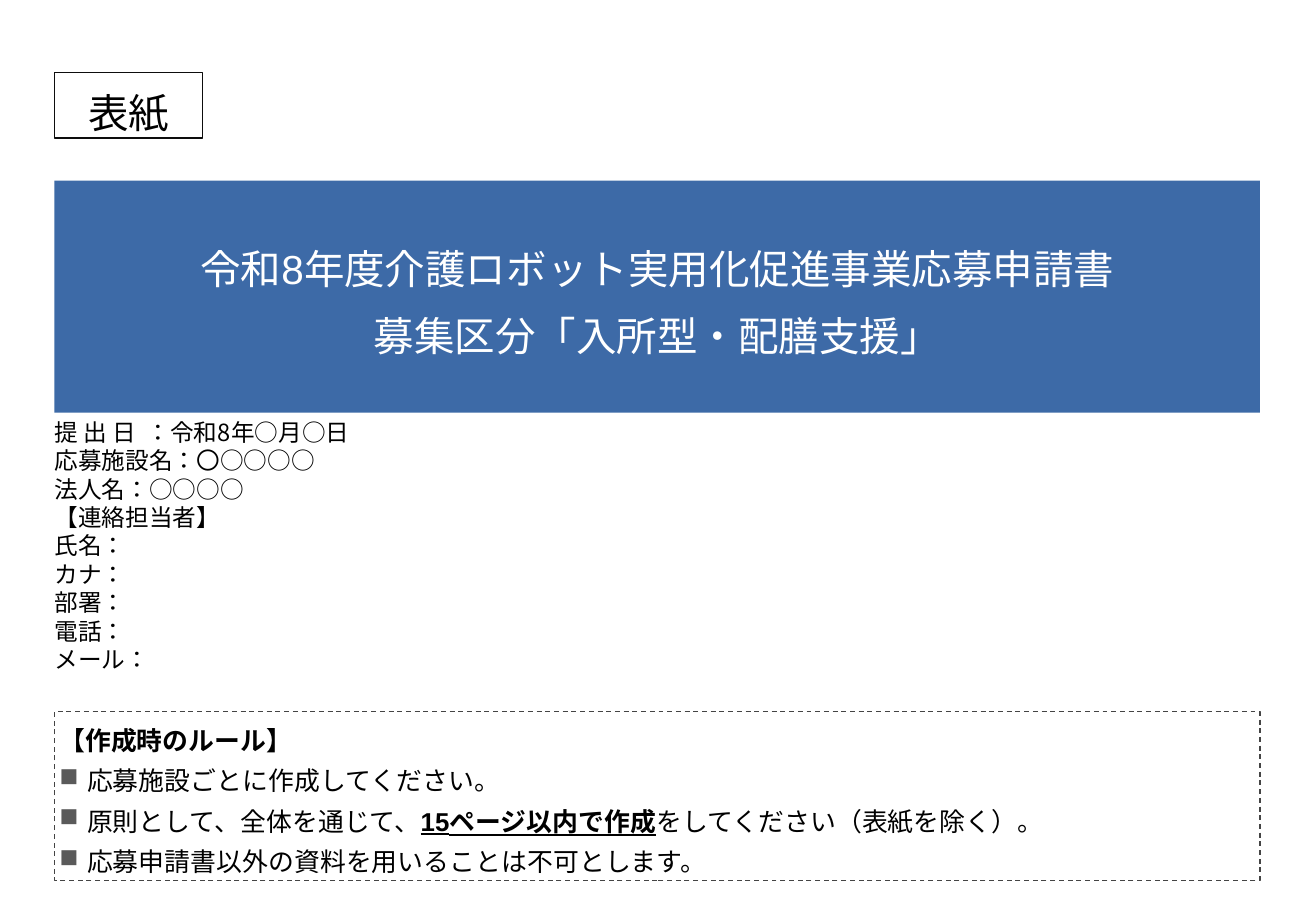
from lxml.etree import SubElement
from pptx import Presentation
from pptx.dml.color import RGBColor
from pptx.enum.dml import MSO_LINE
from pptx.enum.lang import MSO_LANGUAGE_ID
from pptx.enum.shapes import MSO_SHAPE
from pptx.enum.text import MSO_ANCHOR, PP_ALIGN
from pptx.oxml.ns import qn
from pptx.util import Cm, Pt

COLORS = {"banner": "3D6AA7", "white": "FFFFFF", "black": "000000",
          "tag_line": "0D0D0D", "rule_line": "444444", "bullet": "5A5A5A"}
CJK_FONT = "Noto Sans CJK JP"
LEFT, WIDTH = 1.14, 25.2

CONTACT_LINES = [
    "提 出 日  ：令和8年○月○日", "応募施設名：〇○○○○", "法人名：○○○○", "【連絡担当者】",
    "氏名：", "カナ：", "部署：", "電話：", "メール：",
]
RULES_HEADING = "【作成時のルール】"
# Each rule is a list of (text, emphasised) pieces.
RULES = [
    [("応募施設ごとに作成してください。", False)],
    [("原則として、全体を通じて、", False), ("15ページ以内で作成", True),
     ("をしてください（表紙を除く）。", False)],
    [("応募申請書以外の資料を用いることは不可とします。", False)],
]


def color(name):
    return RGBColor.from_string(COLORS[name])


def style(p, size, name="Arial", ink="black"):
    """Set the paragraph's Latin and Japanese fonts, size and colour."""
    font = p.font
    font.name, font.size = name, Pt(size)
    font.color.rgb = color(ink)
    font.language_id = MSO_LANGUAGE_ID.JAPANESE
    def_rpr = p._p.get_or_add_pPr().find(qn("a:defRPr"))
    SubElement(def_rpr, qn("a:ea")).set("typeface", CJK_FONT)


def set_indent(p, indent):
    p_pr = p._p.get_or_add_pPr()
    p_pr.set("marL", str(Cm(indent)))
    p_pr.set("indent", str(-Cm(indent)))
    return p_pr


def add_bullet(p):
    p_pr = set_indent(p, 0.58)
    bullet_color = SubElement(p_pr, qn("a:buClr"))
    SubElement(bullet_color, qn("a:srgbClr")).set("val", COLORS["bullet"])
    SubElement(p_pr, qn("a:buChar")).set("char", "■")


def set_margins(tf, x, top, bottom):
    tf.margin_left = tf.margin_right = Cm(x)
    tf.margin_top, tf.margin_bottom = Cm(top), Cm(bottom)


def paragraphs(tf, count):
    """Return count paragraphs, the first being the frame's own."""
    return [tf.paragraphs[0]] + [tf.add_paragraph() for _ in range(count - 1)]


def add_box(slide, box, fill=None, line=None):
    sp = slide.shapes.add_shape(MSO_SHAPE.RECTANGLE, *map(Cm, box))
    sp.shadow.inherit = False
    if fill:
        sp.fill.solid()
        sp.fill.fore_color.rgb = color(fill)
    else:
        sp.fill.background()
    if line:
        sp.line.color.rgb = color(line)
        sp.line.width = Pt(0.75)
    else:
        sp.line.fill.background()
    return sp


def add_titles(tf, lines, ink):
    for i, (p, text) in enumerate(zip(paragraphs(tf, len(lines)), lines)):
        p.text = text
        p.alignment = PP_ALIGN.CENTER
        p.line_spacing = 1.2
        if i:
            p.space_before = Pt(5)
        style(p, 24, ink=ink)


def add_cover_tag(slide, box):
    tf = add_box(slide, box, line="tag_line").text_frame
    tf.vertical_anchor = MSO_ANCHOR.TOP
    add_titles(tf, ["表紙"], "black")


def add_banner(slide, box):
    tf = add_box(slide, box, fill="banner").text_frame
    tf.word_wrap = False
    tf.vertical_anchor = MSO_ANCHOR.MIDDLE
    set_margins(tf, 0.05, 0.05, 0.05)
    add_titles(tf, ["令和8年度介護ロボット実用化促進事業応募申請書",
                    "募集区分「入所型・配膳支援」"], "white")


def add_contact(slide, box):
    tf = slide.shapes.add_textbox(*map(Cm, box)).text_frame
    tf.word_wrap = True
    set_margins(tf, 0, 0.1, 0.13)
    for p, text in zip(paragraphs(tf, len(CONTACT_LINES)), CONTACT_LINES):
        p.text = text
        set_indent(p, 0.74)
        style(p, 14, CJK_FONT)


def add_rules(slide, box):
    sp = add_box(slide, box, line="rule_line")
    sp.line.dash_style = MSO_LINE.DASH
    tf = sp.text_frame
    tf.word_wrap = True
    tf.vertical_anchor = MSO_ANCHOR.MIDDLE
    set_margins(tf, 0.1, 0.1, 0.1)
    heading, *items = paragraphs(tf, len(RULES) + 1)
    heading.text = RULES_HEADING
    for p, pieces in zip(items, RULES):
        for text, emphasised in pieces:
            r = p.add_run()
            r.text = text
            if emphasised:
                r.font.bold = r.font.underline = True
        add_bullet(p)
    for p in [heading, *items]:
        p.alignment = PP_ALIGN.LEFT
        p.line_spacing = 1.3
        style(p, 15.3)
    heading.font.bold = True


def main():
    prs = Presentation()
    prs.slide_width, prs.slide_height = Cm(27.51), Cm(19.05)
    slide = prs.slides.add_slide(prs.slide_layouts[6])
    add_contact(slide, (LEFT, 8.64, WIDTH, 5.61))
    add_rules(slide, (LEFT, 14.88, WIDTH, 3.53))
    add_cover_tag(slide, (LEFT, 1.52, 3.1, 1.37))
    add_banner(slide, (LEFT, 3.78, WIDTH, 4.85))
    prs.save("out.pptx")


if __name__ == "__main__":
    main()
